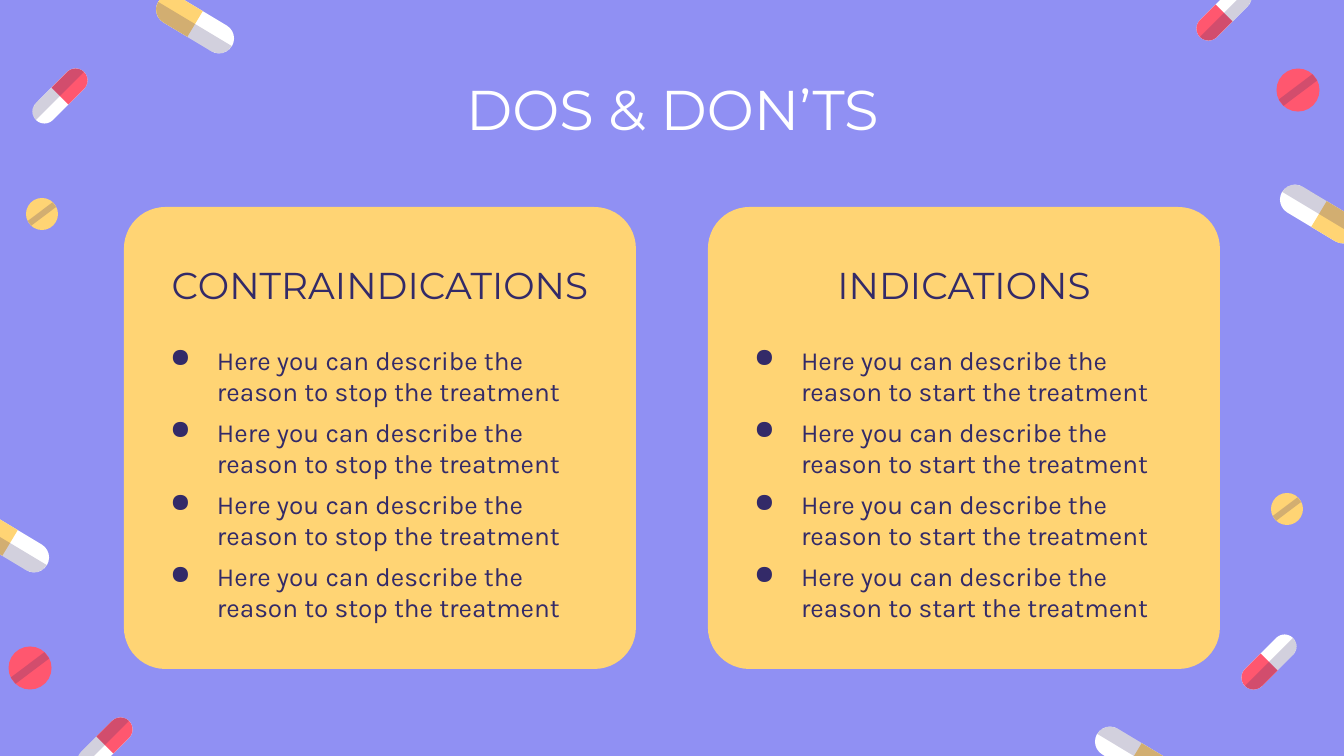
from math import cos, radians, sin

from lxml.etree import SubElement
from pptx import Presentation
from pptx.dml.color import RGBColor
from pptx.enum.shapes import MSO_SHAPE as Shape
from pptx.enum.text import MSO_ANCHOR as Anchor, PP_ALIGN as Align
from pptx.oxml.ns import qn
from pptx.util import Pt

TITLE = "DOS & DON’TS"
CARDS = [
    ("CONTRAINDICATIONS", ["Here you can describe the reason to stop the treatment"] * 4),
    ("INDICATIONS", ["Here you can describe the reason to start the treatment"] * 4),
]

# Capsule kinds: colour, straight length, width
KINDS = {"small": ("red", 44, 24), "large": ("gold", 56, 30)}
# Kind, centre x, centre y, direction of the coloured end in degrees
PILLS = [
    ("small", 60, 96, -45), ("small", 105, 745, -45),
    ("small", 1269, 662, 135), ("small", 1224, 13, 135),
    ("large", 195, 24, 211), ("large", 10, 543, 211),
    ("large", 1134, 756, 31), ("large", 1319, 214, 31),
]
# Colour, centre x, centre y, diameter, groove width
DISKS = [
    ("red", 30, 668, 43, 8), ("gold", 42, 214, 32, 6),
    ("red", 1298, 90, 43, 8), ("gold", 1287, 509, 32, 6),
]


class Theme:
    back, gold, red = "9090F3", "FFD474", "FF576F"
    white, ink = "FFFFFF", "332A68"
    head, body = "Montserrat", "Karla"
    title, sub, text = 30, 20, 14
    shade = 22


WIDE, HIGH = 1344, 756
SCALE = 9144000 / WIDE
PAD = 13
CARD_X, CARD_Y, CARD_W, CARD_H, STEP = 124, 207, 512, 462, 584
TILT = -37


def px(n):
    return round(n * SCALE)


def rgb(code):
    return RGBColor.from_string(code)


def paint(shape, code, alpha=None):
    shape.shadow.inherit = False
    shape.fill.solid()
    shape.fill.fore_color.rgb = rgb(code)
    shape.line.fill.background()
    if alpha:
        color = shape._element.spPr.find(".//" + qn("a:srgbClr"))
        SubElement(color, qn("a:alpha"), val=str(alpha * 1000))


def add_part(slide, kind, mid, size, turn, code, alpha=None, adj=()):
    """Add a painted preset shape centred on mid."""
    (x, y), (w, h) = mid, size
    part = slide.shapes.add_shape(kind, *map(px, (x - w / 2, y - h / 2, w, h)))
    part.rotation = turn
    for i, value in enumerate(adj):
        part.adjustments[i] = value
    paint(part, code, alpha)


def add_shade(slide, x, y, turn, half, rad):
    """Darken one long side of a capsule."""
    c, s = cos(radians(turn)), sin(radians(turn))
    pts = []
    for off, start in ((-half, 180), (half, 270)):
        for step in range(5):
            a = radians(start + step * 22.5)
            u, v = off + rad * cos(a), rad * sin(a)
            pts.append((px(x + u * c - v * s), px(y + u * s + v * c)))
    path = slide.shapes.build_freeform(*pts[0])
    path.add_line_segments(pts[1:])
    paint(path.convert_to_shape(), Theme.ink, Theme.shade)


def add_pill(slide, kind, x, y, turn):
    name, length, width = KINDS[kind]
    full = length + width
    add_part(slide, Shape.ROUNDED_RECTANGLE, (x, y), (full, width), turn,
             Theme.white, adj=[0.5])
    mid = (x + full / 4 * cos(radians(turn)), y + full / 4 * sin(radians(turn)))
    add_part(slide, Shape.ROUND_2_SAME_RECTANGLE, mid, (width, full / 2), turn + 90,
             getattr(Theme, name), adj=[0.5, 0])
    add_shade(slide, x, y, turn, length / 2, width / 2)


def add_disk(slide, name, x, y, size, groove):
    add_part(slide, Shape.OVAL, (x, y), (size, size), 0, getattr(Theme, name))
    add_part(slide, Shape.RECTANGLE, (x, y), (size - 1, groove), TILT,
             Theme.ink, Theme.shade)


def write(box, lines, area, font, size, code, align=Align.LEFT):
    box.left, box.top, box.width, box.height = map(px, area)
    frame = box.text_frame
    frame.text = "\n".join(lines)
    frame.word_wrap = True
    frame.vertical_anchor = Anchor.MIDDLE
    frame.margin_left = frame.margin_right = px(PAD)
    frame.margin_top = frame.margin_bottom = px(PAD)
    for para in frame.paragraphs:
        para.alignment = align
        for run in para.runs:
            run.font.name, run.font.size = font, Pt(size)
            run.font.color.rgb = rgb(code)
    return frame.paragraphs


def add_bullets(paras):
    for i, para in enumerate(paras):
        para.space_before = Pt(5 if i else 0)
        props = para._p.get_or_add_pPr()
        props.set("marL", str(px(67)))
        props.set("indent", str(px(-47)))
        SubElement(SubElement(props, qn("a:buClr")), qn("a:srgbClr"), val=Theme.ink)
        SubElement(props, qn("a:buChar"), char="●")
    paras[-1].space_after = Pt(5)


def add_card(slide, x, head, items):
    mid = (x + CARD_W / 2, CARD_Y + CARD_H / 2)
    add_part(slide, Shape.ROUNDED_RECTANGLE, mid, (CARD_W, CARD_H), 0,
             Theme.gold, adj=[0.09])
    left, width = x + PAD, CARD_W - 2 * PAD
    box = slide.shapes.add_textbox(0, 0, 0, 0)
    write(box, [head], (left, 246, width, 78),
          Theme.head, Theme.sub, Theme.ink, Align.CENTER)
    box = slide.shapes.add_textbox(0, 0, 0, 0)
    add_bullets(write(box, items, (left, 323, width, 321),
                      Theme.body, Theme.text, Theme.ink))


def main():
    deck = Presentation()
    deck.slide_width, deck.slide_height = px(WIDE), px(HIGH)
    slide = deck.slides.add_slide(deck.slide_layouts[5])
    slide.background.fill.solid()
    slide.background.fill.fore_color.rgb = rgb(Theme.back)
    for pill in PILLS:
        add_pill(slide, *pill)
    for disk in DISKS:
        add_disk(slide, *disk)
    for i, (head, items) in enumerate(CARDS):
        add_card(slide, CARD_X + i * STEP, head, items)
    write(slide.shapes.title, [TITLE], (106, 66, 1133, 85),
          Theme.head, Theme.title, Theme.white, Align.CENTER)
    deck.save("out.pptx")


if __name__ == "__main__":
    main()
